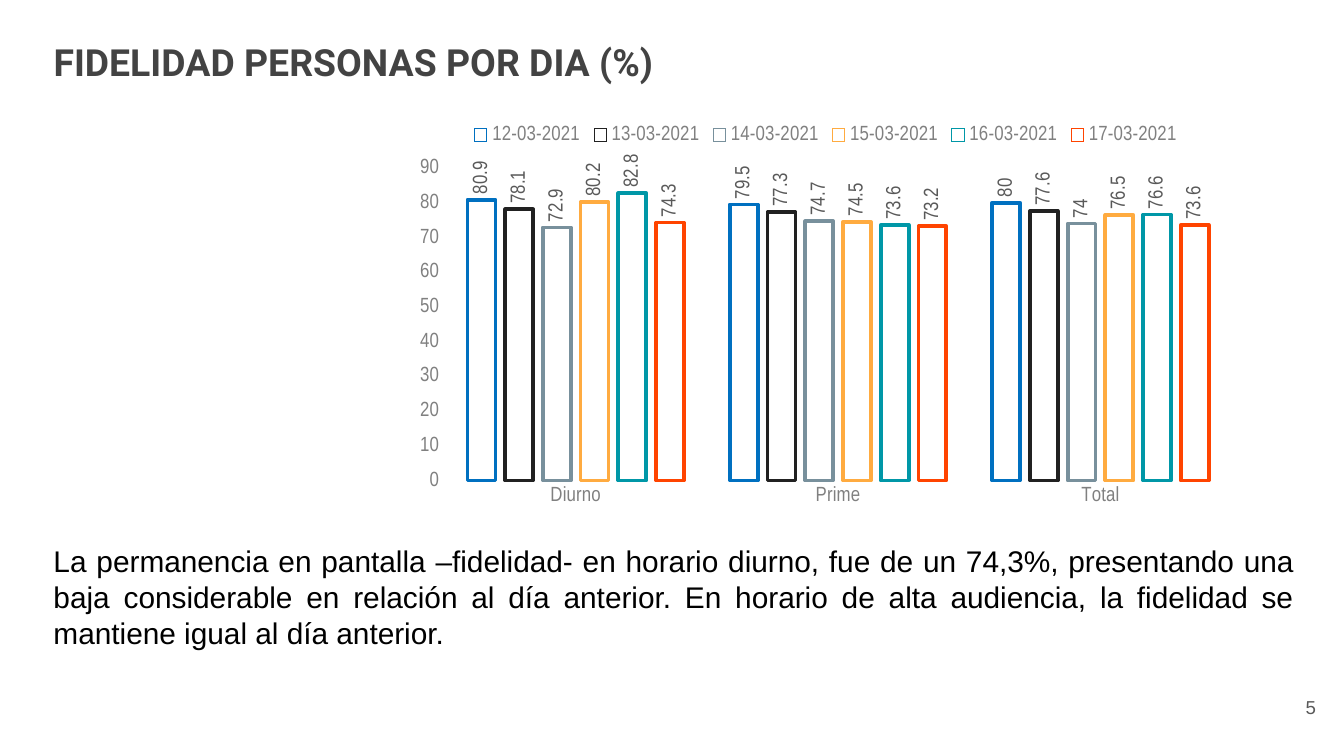
from pptx import Presentation
from pptx.chart.data import CategoryChartData
from pptx.dml.color import RGBColor
from pptx.enum.chart import XL_CHART_TYPE, XL_LABEL_POSITION, XL_LEGEND_POSITION, XL_TICK_MARK
from pptx.enum.text import MSO_ANCHOR, PP_ALIGN
from pptx.util import Inches, Pt

COLUMN_CLUSTERED = XL_CHART_TYPE.COLUMN_CLUSTERED
OUTSIDE_END = XL_LABEL_POSITION.OUTSIDE_END
LEGEND_TOP = XL_LEGEND_POSITION.TOP
NO_TICK = XL_TICK_MARK.NONE
TOP, MIDDLE = MSO_ANCHOR.TOP, MSO_ANCHOR.MIDDLE
LEFT, RIGHT, JUSTIFY = PP_ALIGN.LEFT, PP_ALIGN.RIGHT, PP_ALIGN.JUSTIFY

SLIDE_WIDTH = Inches(10)
SLIDE_HEIGHT = SLIDE_WIDTH * 9 // 16

BLACK = RGBColor(0x00, 0x00, 0x00)
TITLE_GRAY = RGBColor(0x43, 0x43, 0x43)
LABEL_GRAY = RGBColor(0x59, 0x59, 0x59)
AXIS_GRAY = RGBColor(0x80, 0x80, 0x80)
BLUE = RGBColor(0x00, 0x70, 0xC0)
CHARCOAL = RGBColor(0x21, 0x21, 0x21)
SLATE = RGBColor(0x78, 0x90, 0x9C)
AMBER = RGBColor(0xFF, 0xAB, 0x40)
TEAL = RGBColor(0x00, 0x97, 0xA7)
ORANGE = RGBColor(0xFF, 0x44, 0x00)

TITLE = "FIDELIDAD PERSONAS POR DIA (%)"
COMMENT = (
    "La permanencia en pantalla –fidelidad- en horario diurno, fue de un 74,3%, "
    "presentando una baja considerable en relación al día anterior. En horario de "
    "alta audiencia, la fidelidad se mantiene igual al día anterior."
)
CATEGORIES = ["Diurno", "Prime", "Total"]
DAYS = [
    ("12-03-2021", (80.9, 79.5, 80), BLUE),
    ("13-03-2021", (78.1, 77.3, 77.6), CHARCOAL),
    ("14-03-2021", (72.9, 74.7, 74), SLATE),
    ("15-03-2021", (80.2, 74.5, 76.5), AMBER),
    ("16-03-2021", (82.8, 73.6, 76.6), TEAL),
    ("17-03-2021", (74.3, 73.2, 73.6), ORANGE),
]

TITLE_FONT = {"name": "Roboto", "size": Pt(20), "bold": True}
COMMENT_FONT = {"name": "Arial", "size": Pt(16)}
NUMBER_FONT = {"name": "Arial", "size": Pt(10)}
CHART_FONT = {"name": "Arial Narrow", "size": Pt(11)}


def set_attributes(target, values):
    """Set each named value on the target."""
    for name, value in values.items():
        setattr(target, name, value)


def set_font(font, values, color):
    """Apply font values and a solid color."""
    set_attributes(font, values)
    font.color.rgb = color


def add_text(slide, box, text, font_values, color, alignment=LEFT, anchor=TOP, inset=0.1):
    """Place one paragraph in the given box."""
    shape = slide.shapes.add_textbox(*map(Inches, box))
    frame = shape.text_frame
    set_attributes(frame, {
        "word_wrap": True,
        "vertical_anchor": anchor,
        "margin_top": Inches(inset),
        "margin_bottom": Inches(inset),
    })
    paragraph = frame.paragraphs[0]
    paragraph.alignment = alignment
    run = paragraph.add_run()
    run.text = text
    set_font(run.font, font_values, color)


def format_axis(axis):
    """Leave only the gray tick labels of an axis."""
    set_attributes(axis, {
        "has_major_gridlines": False,
        "major_tick_mark": NO_TICK,
        "minor_tick_mark": NO_TICK,
    })
    axis.format.line.fill.background()
    set_font(axis.tick_labels.font, CHART_FONT, AXIS_GRAY)


def format_series(series, color):
    """Outline the columns and turn their value labels upright."""
    series.format.fill.background()
    series.format.line.color.rgb = color
    series.format.line.width = Pt(2)
    series.invert_if_negative = False
    labels = series.data_labels
    set_attributes(labels, {"show_value": True, "position": OUTSIDE_END})
    set_font(labels.font, CHART_FONT, LABEL_GRAY)
    for body in labels._element.xpath("c:txPr/a:bodyPr"):
        body.set("rot", "-5400000")
        body.set("vert", "horz")


def add_loyalty_chart(slide, box):
    """Place the column chart of loyalty by day in the given box."""
    data = CategoryChartData()
    data.categories = CATEGORIES
    for day, values, _ in DAYS:
        data.add_series(day, values)
    chart = slide.shapes.add_chart(COLUMN_CLUSTERED, *map(Inches, box), data).chart
    set_font(chart.font, CHART_FONT, BLACK)
    set_attributes(chart, {"has_title": False, "has_legend": True})
    set_attributes(chart.legend, {"position": LEGEND_TOP, "include_in_layout": False})
    set_font(chart.legend.font, CHART_FONT, AXIS_GRAY)
    for axis in (chart.category_axis, chart.value_axis):
        format_axis(axis)
    chart.value_axis.minimum_scale = 0
    plot = chart.plots[0]
    set_attributes(plot, {"gap_width": 164, "overlap": -35, "vary_by_categories": False})
    for series, (_, _, color) in zip(plot.series, DAYS):
        format_series(series, color)


def build_slide(presentation):
    """Add the loyalty slide with its title, chart and comment."""
    slide = presentation.slides.add_slide(presentation.slide_layouts[6])
    add_text(slide, (9.29, 5.05, 0.6, 0.43), "5", NUMBER_FONT, LABEL_GRAY, RIGHT, MIDDLE)
    add_text(slide, (0.3, 0.19, 8.39, 0.62), TITLE, TITLE_FONT, TITLE_GRAY)
    add_text(slide, (0.3, 3.99, 9.43, 0.91), COMMENT, COMMENT_FONT, BLACK, JUSTIFY, inset=0.05)
    add_loyalty_chart(slide, (3, 0.82, 6.29, 3))


def main():
    """Build and save the presentation."""
    presentation = Presentation()
    set_attributes(presentation, {"slide_width": SLIDE_WIDTH, "slide_height": SLIDE_HEIGHT})
    build_slide(presentation)
    presentation.save("out.pptx")


if __name__ == "__main__":
    main()
